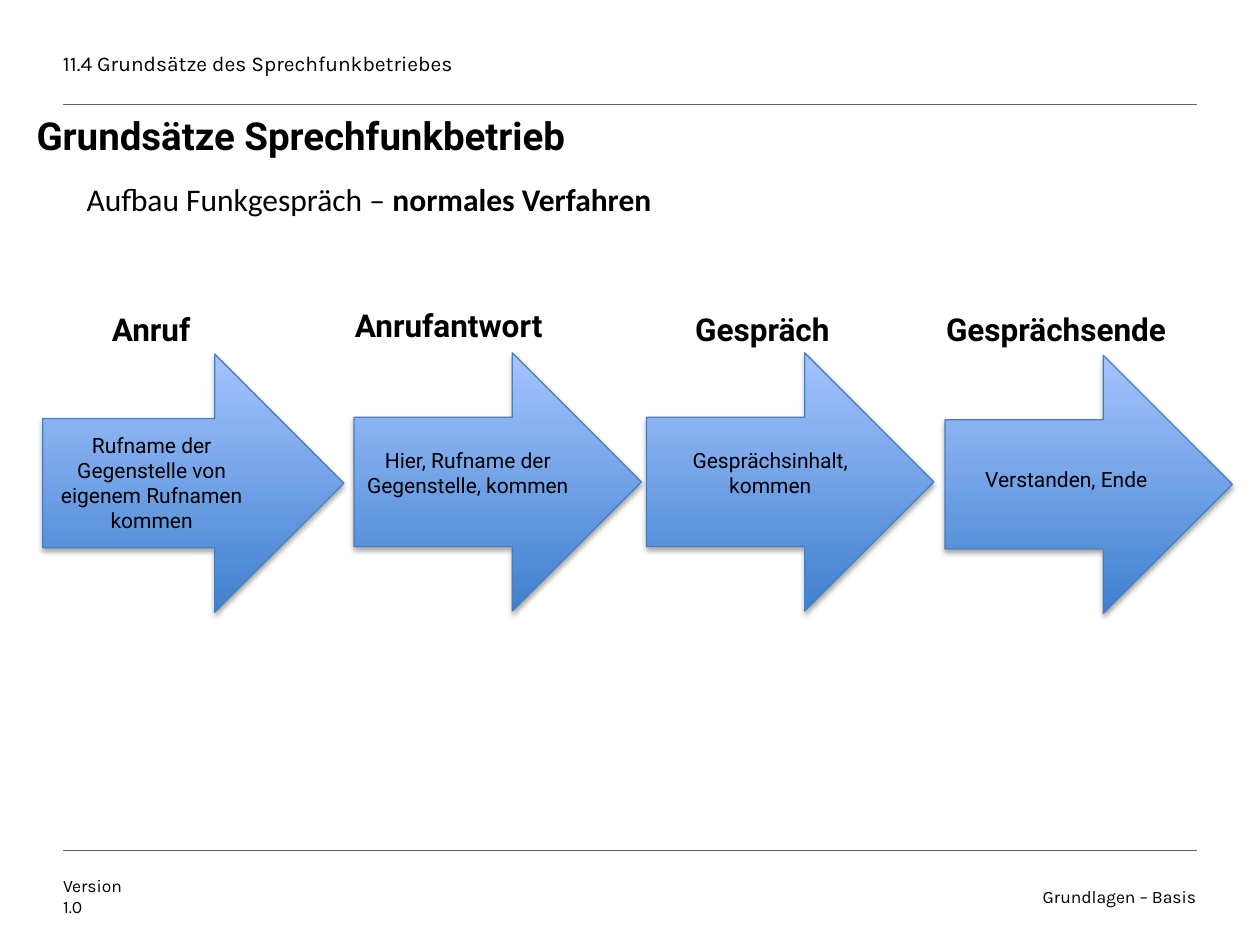
from lxml import etree
from pptx import Presentation
from pptx import util as u
from pptx.dml.color import RGBColor
from pptx.enum import shapes, text
from pptx.oxml.ns import qn

Pt = u.Pt
BLACK = RGBColor(0x00, 0x00, 0x00)
RULE_GRAY = RGBColor(0x64, 0x64, 0x64)
ARROW_DARK = RGBColor(0x3F, 0x80, 0xCE)
ARROW_LIGHT = RGBColor(0xA4, 0xC4, 0xFF)
ARROW_EDGE = RGBColor(0x4B, 0x7E, 0xBC)

LEFT, CENTER, RIGHT = text.PP_ALIGN.LEFT, text.PP_ALIGN.CENTER, text.PP_ALIGN.RIGHT
TOP, MIDDLE = text.MSO_ANCHOR.TOP, text.MSO_ANCHOR.MIDDLE

# heading, heading box, arrow box, message, message box; boxes are left, top, width, height
STEPS = [
    ("Anruf", (56.9, 173.5, 136, 28.8), (24.5, 202.3, 172, 147.6),
     "Rufname der Gegenstelle von eigenem Rufnamen kommen", (18.7, 243.4, 136, 65.5)),
    ("Anrufantwort", (195.8, 171.4, 136, 28.8), (202.3, 201.6, 164.2, 147.6),
     "Hier, Rufname der Gegenstelle, kommen", (199.4, 252, 136, 36)),
    ("Gespräch", (390.2, 173.5, 98, 28.8), (369.4, 201.6, 164.2, 147.6),
     "Gesprächsinhalt, kommen", (372.2, 252, 136, 36)),
    ("Gesprächsende", (533.5, 173.5, 145.4, 28.8), (540, 203, 164.2, 147.6),
     "Verstanden, Ende", (541.4, 262.8, 136, 21.6)),
]


class SlideBuilder:
    def __init__(self, slide):
        self.slide = slide

    def rule(self, top):
        line = self.slide.shapes.add_connector(
            shapes.MSO_CONNECTOR.STRAIGHT, Pt(36), Pt(top), Pt(684), Pt(top))
        line.line.color.rgb = RULE_GRAY
        line.line.width = Pt(0.25)
        etree.SubElement(line._element.spPr, qn("a:effectLst"))

    def label(self, content, box, font, size, bold=False, align=LEFT,
              anchor=TOP, inset=True, spacing=None):
        shape = self.slide.shapes.add_textbox(*map(Pt, box))
        frame = shape.text_frame
        frame.word_wrap = True
        frame.vertical_anchor = anchor
        if not inset:
            frame.margin_left = frame.margin_right = 0
            frame.margin_top = frame.margin_bottom = 0
        frame.text = content
        for paragraph in frame.paragraphs:
            paragraph.alignment = align
            if spacing:
                paragraph.line_spacing = Pt(spacing)
            for run in paragraph.runs:
                run.font.name = font
                run.font.size = Pt(size)
                run.font.bold = bold
                run.font.color.rgb = BLACK
        return frame.paragraphs[0]

    def arrow(self, box):
        shape = self.slide.shapes.add_shape(
            shapes.MSO_SHAPE.RIGHT_ARROW, *map(Pt, box))
        shape.fill.gradient()
        shape.fill.gradient_angle = 90
        for stop, color, position in zip(
                shape.fill.gradient_stops, (ARROW_DARK, ARROW_LIGHT), (0, 1)):
            stop.color.rgb = color
            stop.position = position
        shape.line.color.rgb = ARROW_EDGE
        shape.line.width = Pt(0.75)
        self.drop_shadow(shape)

    def drop_shadow(self, shape):
        shape.shadow.inherit = False
        effects = shape._element.spPr.find(qn("a:effectLst"))
        shadow = etree.SubElement(
            effects, qn("a:outerShdw"), blurRad=str(Pt(3.1)), dist=str(Pt(1.8)),
            dir="5400000", rotWithShape="0")
        color = etree.SubElement(shadow, qn("a:srgbClr"), val=str(BLACK))
        etree.SubElement(color, qn("a:alpha"), val="35000")


def main():
    presentation = Presentation()
    presentation.slide_width, presentation.slide_height = Pt(720), Pt(540)
    builder = SlideBuilder(presentation.slides.add_slide(presentation.slide_layouts[6]))

    builder.rule(59.8)
    builder.label("11.4 Grundsätze des Sprechfunkbetriebes", (36, 24, 438, 24),
                  "Karla", 12, anchor=MIDDLE, inset=False)
    builder.rule(486)
    builder.label("Version\n1.0", (36, 496, 40, 32), "Karla", 10,
                  anchor=MIDDLE, inset=False)
    builder.label("Grundlagen – Basis", (581, 496, 102.4, 32), "Karla", 10,
                  align=RIGHT, anchor=MIDDLE, inset=False)
    builder.label("Grundsätze Sprechfunkbetrieb", (20.9, 66.2, 531, 48),
                  "Roboto", 22, bold=True, inset=False, spacing=24)

    subtitle = builder.label("Aufbau Funkgespräch – ", (42.5, 99.4, 391, 28.8),
                             "Calibri", 18)
    emphasis = subtitle.add_run()
    emphasis.text = "normales Verfahren"
    emphasis.font.name = "Calibri"
    emphasis.font.size = Pt(18)
    emphasis.font.bold = True
    emphasis.font.color.rgb = BLACK

    for heading, heading_box, arrow_box, message, message_box in STEPS:
        builder.arrow(arrow_box)
        builder.label(heading, heading_box, "Roboto", 18, bold=True)
        builder.label(message, message_box, "Roboto", 12, align=CENTER)

    presentation.save("out.pptx")


if __name__ == "__main__":
    main()
